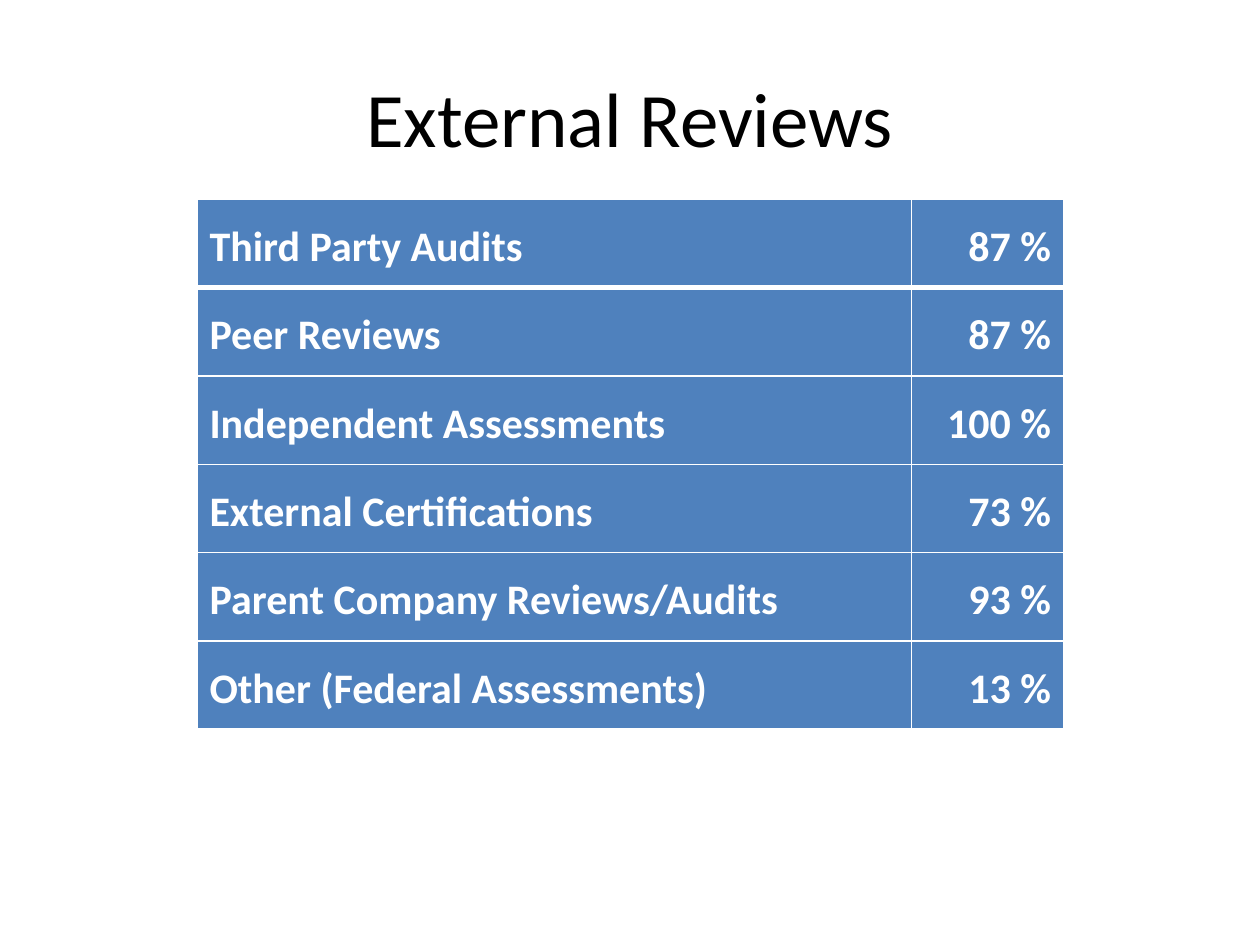
"""Build the External Reviews slide with its table of shares."""
from dataclasses import dataclass

from lxml import etree
from pptx import Presentation
from pptx import util as u
from pptx.dml.color import RGBColor
from pptx.enum import text
from pptx.oxml import ns

FONT = "Calibri"
WHITE, BLACK, BLUE = "FFFFFF", "000000", "4F81BD"
WIDTHS = (14.4, 3.07)
HEIGHT = 1.78


@dataclass
class Review:
    name: str
    share: int


REVIEWS = [
    Review("Third Party Audits", 87),
    Review("Peer Reviews", 87),
    Review("Independent Assessments", 100),
    Review("External Certifications", 73),
    Review("Parent Company Reviews/Audits", 93),
    Review("Other (Federal Assessments)", 13),
]


def color(code: str) -> RGBColor:
    return RGBColor.from_string(code)


def style(par, size: float, code: str, bold: bool, align) -> None:
    par.alignment = align
    for run in par.runs:
        font = run.font
        font.name, font.size, font.bold = FONT, u.Pt(size), bold
        font.color.rgb = color(code)


def edge(cell, side: str, width: float) -> None:
    props = cell._tc.get_or_add_tcPr()
    line = etree.SubElement(props, ns.qn(f"a:ln{side}"), w=str(u.Pt(width)))
    fill = etree.SubElement(line, ns.qn("a:solidFill"))
    etree.SubElement(fill, ns.qn("a:srgbClr"), val=WHITE)


def draw_cell(cell, words: str, align, top: float, base: float) -> None:
    for side, width in zip("LRTB", (1, 1, top, base)):
        edge(cell, side, width)
    cell.fill.solid()
    cell.fill.fore_color.rgb = color(BLUE)
    cell.vertical_anchor = text.MSO_ANCHOR.MIDDLE
    par = cell.text_frame.paragraphs[0]
    par.text = words
    par.line_spacing = 1.15
    style(par, 24, WHITE, True, align)


def draw_table(slide, rows: list[Review]) -> None:
    frame = slide.shapes.add_table(
        len(rows), len(WIDTHS), u.Cm(3.97), u.Cm(4.02),
        u.Cm(sum(WIDTHS)), u.Cm(HEIGHT * len(rows)))
    table = frame.table
    table.horz_banding = False
    for col, width in zip(table.columns, WIDTHS):
        col.width = u.Cm(width)
    for i, row in enumerate(rows):
        table.rows[i].height = u.Cm(HEIGHT)
        top, base = (3 if i == 1 else 1), (3 if i == 0 else 1)
        draw_cell(table.cell(i, 0), row.name, text.PP_ALIGN.LEFT, top, base)
        draw_cell(table.cell(i, 1), f"{row.share} %", text.PP_ALIGN.RIGHT, top, base)


def draw_title(slide, words: str) -> None:
    title = slide.shapes.title
    title.left, title.top = u.Cm(1.27), u.Cm(0.76)
    title.width, title.height = u.Cm(22.86), u.Cm(3.18)
    title.text_frame.text = words
    title.text_frame.vertical_anchor = text.MSO_ANCHOR.MIDDLE
    style(title.text_frame.paragraphs[0], 44, BLACK, False, text.PP_ALIGN.CENTER)


def main() -> None:
    deck = Presentation()
    deck.slide_width, deck.slide_height = u.Cm(25.4), u.Cm(19.05)
    slide = deck.slides.add_slide(deck.slide_layouts[5])
    draw_title(slide, "External Reviews")
    draw_table(slide, REVIEWS)
    deck.save("out.pptx")


if __name__ == "__main__":
    main()
